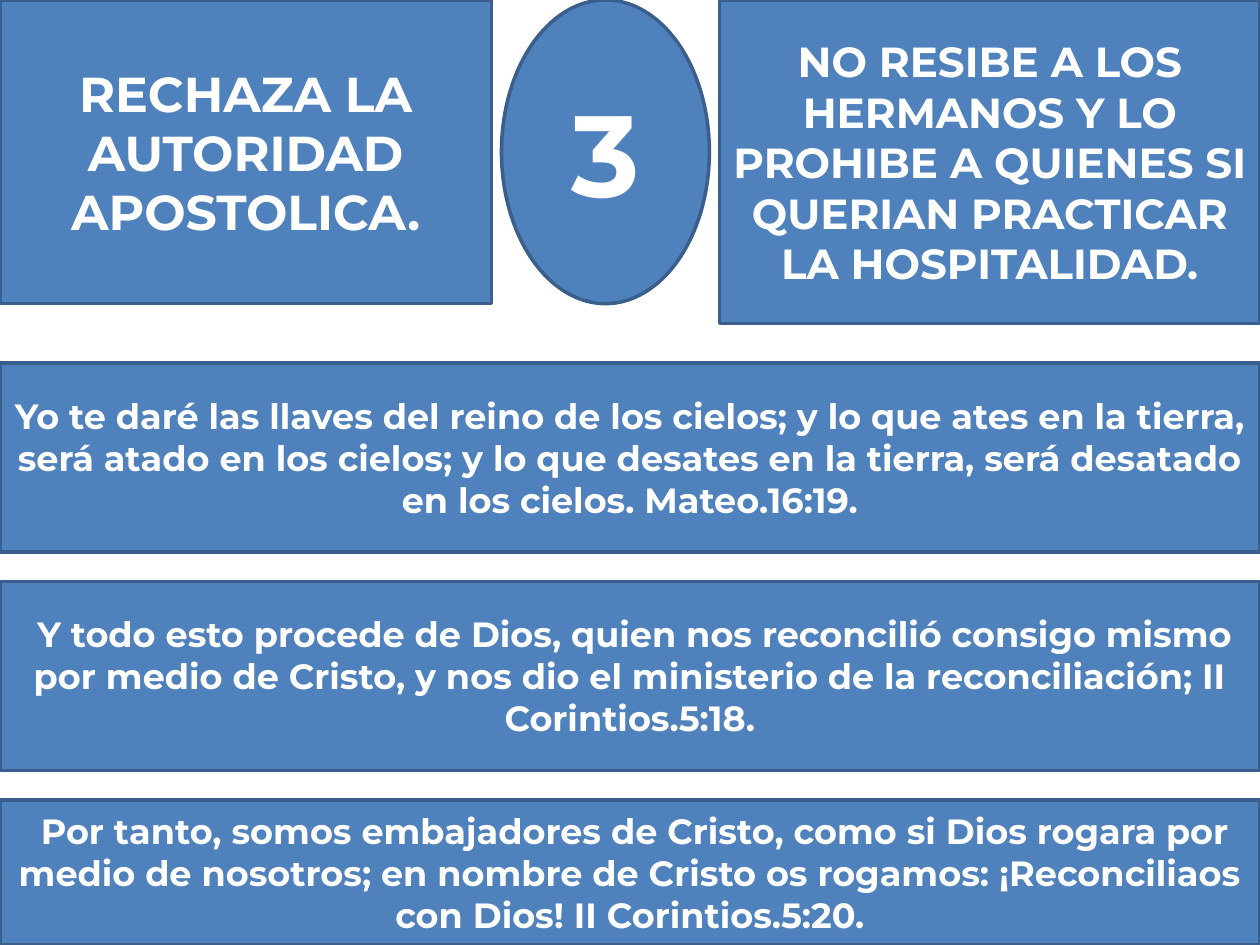
from dataclasses import dataclass

from pptx import Presentation
from pptx import util as u
from pptx.dml.color import RGBColor
from pptx.enum import shapes, text

FILL, EDGE, INK = "4F81BD", "3A5F8C", "FFFFFF"
WIDE, HIGH = 10, 7.5
RECT = shapes.MSO_SHAPE.RECTANGLE
OVAL = shapes.MSO_SHAPE.OVAL


@dataclass
class Box:
    words: str
    left: float
    top: float
    width: float
    height: float
    size: int
    kind: shapes.MSO_SHAPE = RECT


def paint(target, code: str) -> None:
    """Give a fill a solid colour."""
    target.solid()
    target.fore_color.rgb = RGBColor.from_string(code)


def write(frame, words: str, *, size: int, color: str = INK,
          font: str = "Montserrat", bold: bool = True) -> None:
    """Put centred text in a frame."""
    frame.word_wrap = True
    frame.vertical_anchor = text.MSO_ANCHOR.MIDDLE
    para = frame.paragraphs[0]
    para.alignment = text.PP_ALIGN.CENTER
    run = para.add_run()
    run.text = words
    run.font.name = font
    run.font.size = u.Pt(size)
    run.font.bold = bold
    paint(run.font.fill, color)


def draw(slide, box: Box) -> None:
    """Draw one filled, outlined box with its text."""
    area = map(u.Inches, (box.left, box.top, box.width, box.height))
    shape = slide.shapes.add_shape(box.kind, *area)
    shape.shadow.inherit = False
    paint(shape.fill, FILL)
    paint(shape.line.fill, EDGE)
    shape.line.width = u.Pt(2)
    write(shape.text_frame, box.words, size=box.size)


# Top row: two claims with the number between them
HEADS = [
    Box("RECHAZA LA AUTORIDAD APOSTOLICA.", 0, 0, 3.9, 2.41, 28),
    Box("3", 3.98, 0, 1.65, 2.41, 66, OVAL),
    Box("NO RESIBE A LOS HERMANOS Y LO PROHIBE A QUIENES SI QUERIAN "
        "PRACTICAR LA HOSPITALIDAD.", 5.71, 0, 4.29, 2.57, 24),
]

# Full-width verses, evenly stepped; the last is cut at the slide's foot
VERSES = [
    "Yo te daré las llaves del reino de los cielos; y lo que ates en la "
    "tierra, será atado en los cielos; y lo que desates en la tierra, será "
    "desatado en los cielos. Mateo.16:19.",
    " Y todo esto procede de Dios, quien nos reconcilió consigo mismo por "
    "medio de Cristo, y nos dio el ministerio de la reconciliación; II "
    "Corintios.5:18.",
    " Por tanto, somos embajadores de Cristo, como si Dios rogara por medio "
    "de nosotros; en nombre de Cristo os rogamos: ¡Reconciliaos con Dios! "
    "II Corintios.5:20.",
]
START, STEP, TALL = 2.88, 1.735, 1.5


def main() -> None:
    deck = Presentation()
    deck.slide_width, deck.slide_height = u.Inches(WIDE), u.Inches(HIGH)
    slide = deck.slides.add_slide(deck.slide_layouts[6])
    paint(slide.background.fill, "FFFFFF")

    for head in HEADS:
        draw(slide, head)
    for i, verse in enumerate(VERSES):
        top = START + i * STEP
        draw(slide, Box(verse, 0, top, WIDE, min(TALL, HIGH - top), 20))

    deck.save("out.pptx")


if __name__ == "__main__":
    main()
